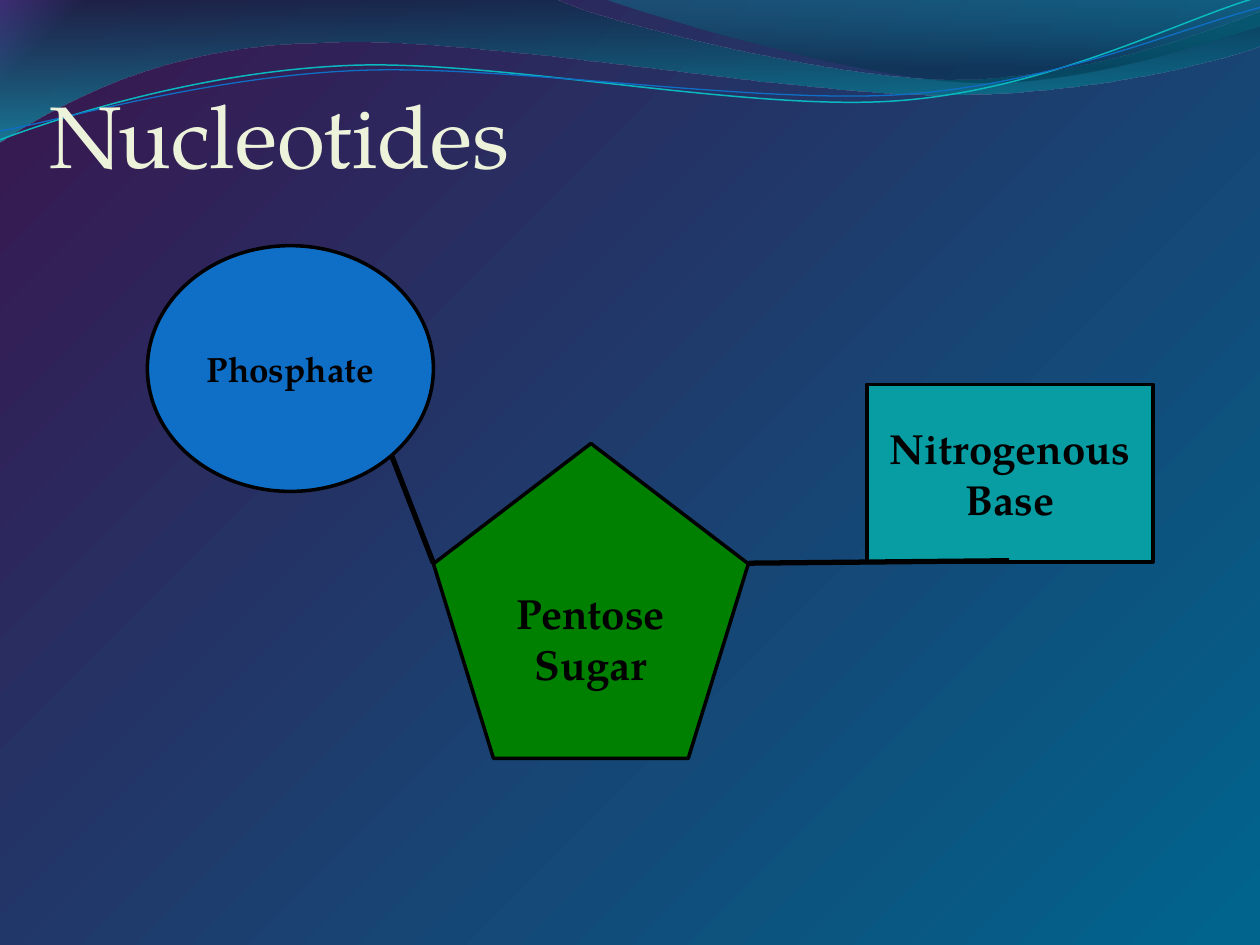
from lxml.etree import SubElement
from pptx import Presentation
from pptx.dml.color import RGBColor
from pptx.enum.shapes import MSO_CONNECTOR, MSO_SHAPE
from pptx.enum.text import MSO_ANCHOR, PP_ALIGN
from pptx.oxml.ns import qn
from pptx.util import Inches, Pt

THEME = {
    "font": "TeX Gyre Pagella",
    "title": "EDF3DB", "ink": "000000",
    "blue": "0F6FC6", "green": "008000", "teal": "089CA3", "aqua": "0AB8BF",
    "head": 50, "body": 24, "small": 20,
    "edge": 2, "bond": 3,
    "back": [(0, "7030A0", 100), (4, "381850", 100), (99, "00648D", 100)],
    "left": [(0, "002B3C", 45), (100, "00C6CF", 55)],
    "right": [(0, "00A1A9", 30), (80, "003347", 45)],
}
TITLE = ("Nucleotides", (0.39, 0.23, 9, 1.25))
PARTS = [
    ("Phosphate", MSO_SHAPE.OVAL, (1.17, 1.95, 2.27, 1.95), "blue", "small"),
    ("Pentose\nSugar", MSO_SHAPE.REGULAR_PENTAGON, (3.44, 3.52, 2.5, 2.5), "green", "body"),
    ("Nitrogenous\nBase", MSO_SHAPE.RECTANGLE, (6.88, 3.05, 2.27, 1.41), "teal", "body"),
]
BONDS = [(3.11, 3.62, 3.44, 4.47), (5.94, 4.47, 8.01, 4.45)]
WAVES = [
    ("left", (0, -0.01), [
        (4.4, -0.01),
        (4.76, 0.17, 6.64, 0.63, 7.58, 0.63),
        (8.53, 0.63, 9.58, 0.26, 10, 0.09),
        (10.01, 0.36),
        (9.83, 0.44, 8.7, 0.76, 7.46, 0.75),
        (6.22, 0.75, 3.82, 0.28, 2.57, 0.34),
        (1.29, 0.35, 0.46, 0.83, -0.01, 1.13)]),
    ("right", (4.79, -0.01), [
        (5.09, 0.11, 6.82, 0.62, 7.69, 0.65),
        (8.56, 0.69, 9.61, 0.32, 10, 0.21),
        (10, 0)]),
]
CURVES = [
    ("aqua", 0.85, (0, 1.11), [
        (0.48, 0.93, 1.58, 0.57, 2.77, 0.52),
        (3.95, 0.47, 5.93, 0.89, 7.13, 0.8),
        (8.33, 0.71, 9.38, 0.15, 9.98, -0.02)]),
    ("blue", 0.75, (0, 1.04), [
        (0.47, 0.96, 1.64, 0.61, 2.83, 0.56),
        (4.03, 0.51, 5.97, 0.83, 7.17, 0.75),
        (8.36, 0.67, 9.41, 0.21, 10, 0.06)]),
]


def color(name):
    return RGBColor.from_string(THEME[name])


def box(sizes):
    return [Inches(size) for size in sizes]


def blend(fill, root, stops, angle):
    fill.gradient()
    fill.gradient_angle = 360 - angle
    ramp = next(root.iter(qn("a:gsLst")))
    for stop in list(ramp):
        ramp.remove(stop)
    for place, shade, alpha in stops:
        stop = SubElement(ramp, qn("a:gs"), pos=str(place * 1000))
        tint = SubElement(stop, qn("a:srgbClr"), val=shade)
        if alpha < 100:
            SubElement(tint, qn("a:alpha"), val=str(alpha * 1000))


def bend(shape, parts):
    steps = list(shape.element.iter(qn("a:lnTo")))
    for step, part in zip(steps, parts):
        if len(part) == 2:
            continue
        arc = step.makeelement(qn("a:cubicBezTo"))
        for x, y in zip(box(part[::2]), box(part[1::2])):
            SubElement(arc, qn("a:pt"), x=str(x - shape.left), y=str(y - shape.top))
        step.getparent().replace(step, arc)


def draw(slide, start, parts, close):
    maker = slide.shapes.build_freeform(*box(start))
    maker.add_line_segments([box(part[-2:]) for part in parts], close=close)
    shape = maker.convert_to_shape()
    shape.shadow.inherit = False
    bend(shape, parts)
    return shape


def stroke(line, name, width):
    line.color.rgb = color(name)
    line.width = Pt(width)


def write(frame, text, size, tone, align, bold=False):
    frame.word_wrap = True
    frame.text = text
    for para in frame.paragraphs:
        para.alignment = align
        for run in para.runs:
            run.font.name = THEME["font"]
            run.font.size = Pt(THEME[size])
            run.font.bold = bold
            run.font.color.rgb = color(tone)


def main():
    """Build the nucleotide slide."""
    deck = Presentation()
    deck.slide_width, deck.slide_height = box((10, 7.5))
    slide = deck.slides.add_slide(deck.slide_layouts[6])
    blend(slide.background.fill, slide.element, THEME["back"], 45)

    for stops, start, parts in WAVES:
        wave = draw(slide, start, parts, True)
        blend(wave.fill, wave.element, THEME[stops], 90)
        wave.line.fill.background()
    for name, width, start, parts in CURVES:
        curve = draw(slide, start, parts, False)
        curve.fill.background()
        stroke(curve.line, name, width)

    text, place = TITLE
    frame = slide.shapes.add_textbox(*box(place)).text_frame
    frame.margin_left = frame.margin_right = frame.margin_bottom = 0
    frame.vertical_anchor = MSO_ANCHOR.BOTTOM
    write(frame, text, "head", "title", PP_ALIGN.LEFT)

    for text, kind, place, fill, size in PARTS:
        shape = slide.shapes.add_shape(kind, *box(place))
        shape.shadow.inherit = False
        shape.fill.solid()
        shape.fill.fore_color.rgb = color(fill)
        stroke(shape.line, "ink", THEME["edge"])
        shape.text_frame.vertical_anchor = MSO_ANCHOR.MIDDLE
        write(shape.text_frame, text, size, "ink", PP_ALIGN.CENTER, True)

    for ends in BONDS:
        bond = slide.shapes.add_connector(MSO_CONNECTOR.STRAIGHT, *box(ends))
        stroke(bond.line, "ink", THEME["bond"])
        SubElement(bond.element.spPr, qn("a:effectLst"))

    deck.save("out.pptx")


if __name__ == "__main__":
    main()
